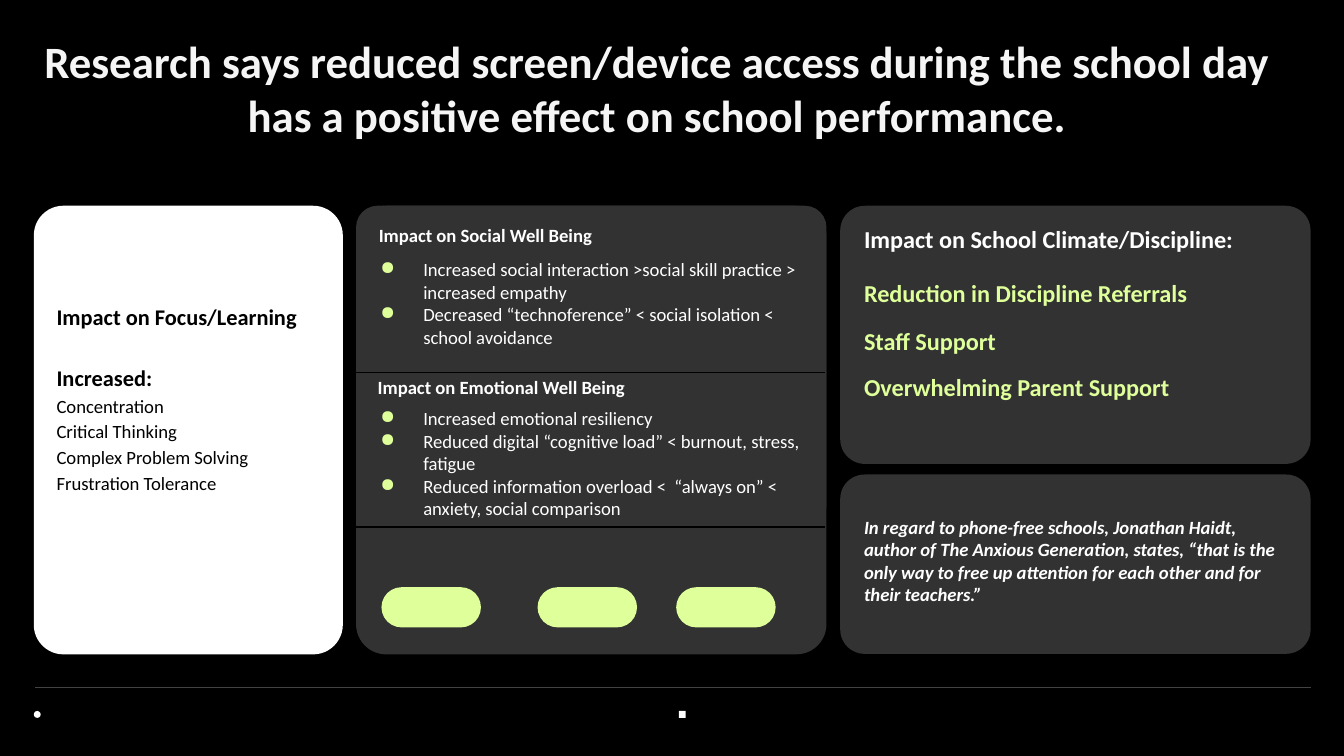
from lxml import etree
from pptx import Presentation
from pptx import util as u
from pptx.dml.color import RGBColor
from pptx.enum import shapes, text
from pptx.oxml.ns import qn

BLACK, WHITE, GREY, LIME = "000000", "FFFFFF", "323232", "DEFF9A"
LEFT, MIDDLE, RIGHT = 0.64, 6.73, 15.88
TOP, WIDE, TALL = 3.89, 8.89, 8.48


def color(value):
    """Turn a hex string into a colour."""
    return RGBColor.from_string(value)


def lengths(*values):
    """Turn centimetres into slide lengths."""
    return [u.Cm(value) for value in values]


def add_shape(page, kind, place, fill, rounding=None):
    """Draw a filled shape without outline; place is left, top, width, height."""
    shape = page.shapes.add_shape(kind, *lengths(*place))
    shape.shadow.inherit = False
    shape.fill.solid()
    shape.fill.fore_color.rgb = color(fill)
    shape.line.fill.background()
    if rounding is not None:
        shape.adjustments[0] = rounding
    return shape


def add_panel(page, place, rounding, fill=GREY):
    """Draw a rounded panel."""
    return add_shape(page, shapes.MSO_SHAPE.ROUNDED_RECTANGLE, place, fill, rounding)


def add_rule(page, left, right, top, line_color):
    """Draw a thin horizontal line."""
    rule = page.shapes.add_connector(
        shapes.MSO_CONNECTOR.STRAIGHT, *lengths(left, top, right, top))
    rule.line.color.rgb = color(line_color)
    rule.line.width = u.Pt(0.75)
    etree.SubElement(rule._element.spPr, qn("a:effectLst"))


def add_text(page, place, lines, size, font_color, bold=False, spacing=1.0):
    """Add a text box with one paragraph per line and return its frame."""
    box = page.shapes.add_textbox(*lengths(*place))
    frame = box.text_frame
    frame.word_wrap = True
    frame.margin_left = frame.margin_right = 0
    frame.margin_top = frame.margin_bottom = 0
    frame.text = "\n".join(lines)
    for para in frame.paragraphs:
        para.line_spacing = spacing
        for span in para.runs:
            font = span.font
            font.name, font.size, font.bold = "Calibri", u.Pt(size), bold
            font.color.rgb = color(font_color)
    return frame


def add_bullets(page, place, lines):
    """Add a white list with lime bullets."""
    frame = add_text(page, place, lines, 10, WHITE)
    for para in frame.paragraphs:
        props = para._p.get_or_add_pPr()
        props.set("marL", str(u.Cm(1.27)))
        props.set("indent", str(u.Cm(-0.81)))
        tint = etree.SubElement(props, qn("a:buClr"))
        etree.SubElement(tint, qn("a:srgbClr"), val=LIME)
        etree.SubElement(props, qn("a:buChar"), char="●")


def add_footer(page):
    """Draw the bottom line and its two small marks."""
    add_rule(page, 0.66, 24.77, 13, "434343")
    add_shape(page, shapes.MSO_SHAPE.OVAL, (LEFT, 13.44, 0.13, 0.13), WHITE)
    add_shape(page, shapes.MSO_SHAPE.RECTANGLE, (12.83, 13.44, 0.13, 0.13), WHITE)


def add_focus(page):
    """Build the white panel on focus and learning."""
    add_panel(page, (LEFT, TOP, 5.84, TALL), 0.096, WHITE)
    add_text(page, (1.07, 5.74, 4.95, 0.66), ["Impact on Focus/Learning"], 12, BLACK, True)
    frame = add_text(page, (1.07, 6.81, 4.95, 4.27), [
        "Increased:", "Concentration", "Critical Thinking",
        "Complex Problem Solving", "Frustration Tolerance"], 10, BLACK, spacing=1.15)
    heading = frame.paragraphs[0].runs[0].font
    heading.size, heading.bold = u.Pt(12), True


def add_well_being(page):
    """Build the middle panel on social and emotional well being."""
    add_panel(page, (MIDDLE, TOP, WIDE, TALL), 0.067)
    for left in (7.21, 10.16, 12.78):
        add_panel(page, (left, 11.1, 1.88, 0.76), 0.5, LIME)
    add_panel(page, (MIDDLE, TOP, WIDE, 6.07), 0.067)
    for top in (7.04, 9.96):
        add_rule(page, MIDDLE, 15.6, top, BLACK)
    add_text(page, (7.16, 4.24, 8.08, 0.64), ["Impact on Social Well Being"], 10, WHITE, True)
    add_bullets(page, (MIDDLE, 4.88, 8.86, 2.16), [
        "Increased social interaction >social skill practice > increased empathy",
        "Decreased “technoference” < social isolation < school avoidance"])
    add_text(page, (7.14, 7.11, 8.08, 0.64), ["Impact on Emotional Well Being"], 10, WHITE, True)
    add_bullets(page, (MIDDLE, 7.7, WIDE, 2.26), [
        "Increased emotional resiliency",
        "Reduced digital “cognitive load” < burnout, stress, fatigue",
        "Reduced information overload <  “always on” < anxiety, social comparison"])


def add_climate(page):
    """Build the right panels on school climate and the quotation."""
    add_panel(page, (RIGHT, TOP, WIDE, 4.88), 0.096)
    add_panel(page, (RIGHT, 8.97, WIDE, 3.39), 0.136)
    for top, line, font_color in (
            (4.24, "Impact on School Climate/Discipline:", WHITE),
            (5.26, "Reduction in Discipline Referrals", LIME),
            (6.17, "Staff Support", LIME),
            (7.04, "Overwhelming Parent Support", LIME)):
        add_text(page, (16.33, top, 8.08, 0.64), [line], 13, font_color, True)
    quote = add_text(page, (16.33, 9.32, 8.08, 2.87), [
        "In regard to phone-free schools, Jonathan Haidt, author of The Anxious "
        "Generation, states, “that is the only way to free up attention for each "
        "other and for their teachers.”"], 10, WHITE, True)
    quote.margin_top = u.Cm(0.43)
    quote.paragraphs[0].runs[0].font.italic = True


def main():
    """Build the slide and save it."""
    deck = Presentation()
    deck.slide_width, deck.slide_height = lengths(25.4, 14.29)
    page = deck.slides.add_slide(deck.slide_layouts[6])
    page.background.fill.solid()
    page.background.fill.fore_color.rgb = color(BLACK)
    add_footer(page)
    add_focus(page)
    add_well_being(page)
    add_climate(page)
    title = add_text(page, (LEFT, 0.64, 23.55, 0.76), [
        "Research says reduced screen/device access during the school day "
        "has a positive effect on school performance."], 24, "F5F5F5", True)
    title.paragraphs[0].alignment = text.PP_ALIGN.CENTER
    deck.save("out.pptx")


if __name__ == "__main__":
    main()
